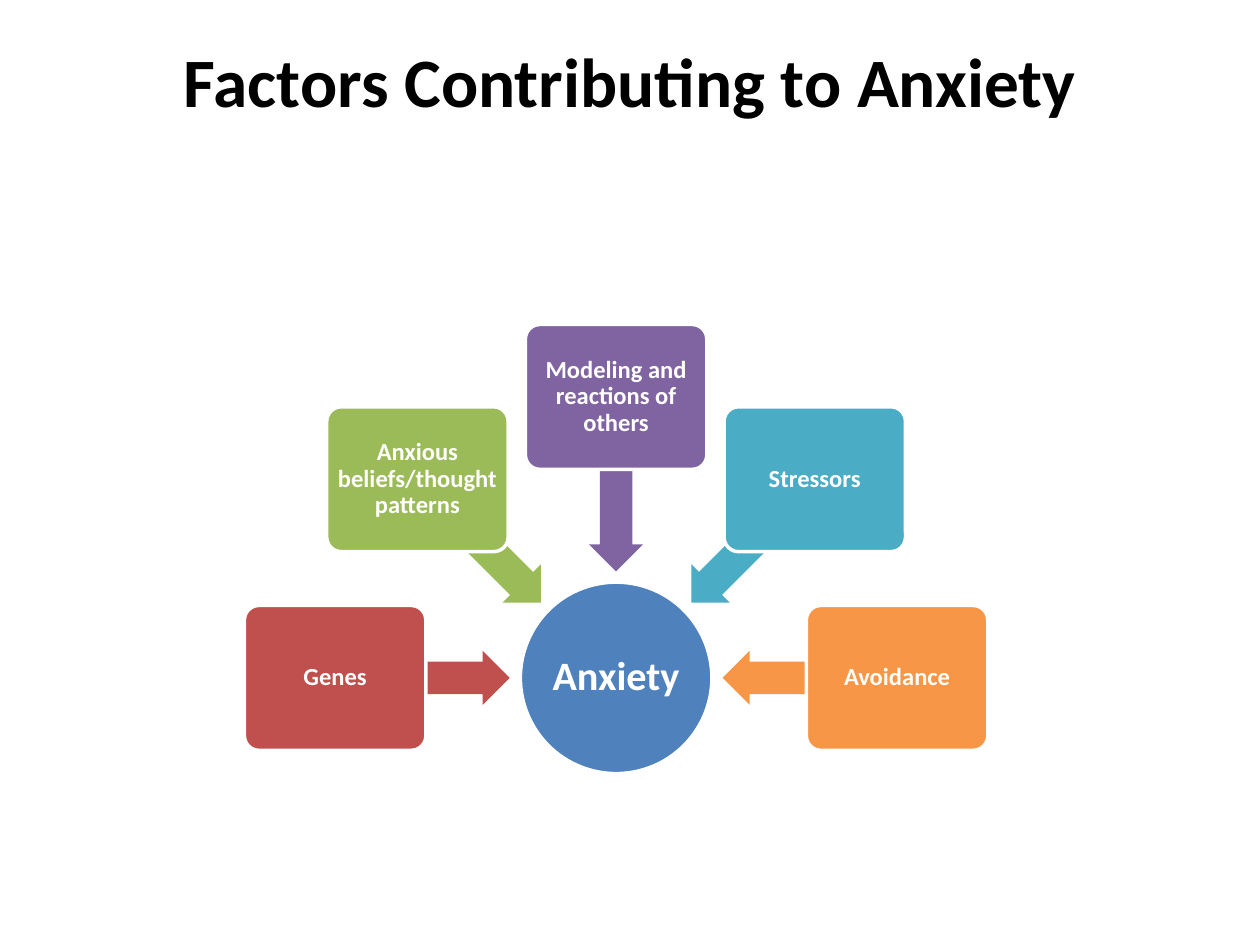
"""Build a slide showing the factors that feed anxiety around a central hub."""
import math
import pptx
import pptx.util
import pptx.dml.color
import pptx.enum.shapes
import pptx.enum.text

Inches, Pt = pptx.util.Inches, pptx.util.Pt
Kind = pptx.enum.shapes.MSO_SHAPE
Anchor = pptx.enum.text.MSO_ANCHOR
Align = pptx.enum.text.PP_ALIGN

TITLE = "Factors Contributing to Anxiety"
HUB = "Anxiety"
FACTORS = [
    ("Genes", "red"),
    ("Anxious beliefs/thought patterns", "green"),
    ("Modeling and reactions of others", "purple"),
    ("Stressors", "teal"),
    ("Avoidance", "orange"),
]
COLORS = {
    "black": "000000", "white": "FFFFFF", "blue": "4F81BD", "red": "C0504D",
    "green": "9BBB59", "purple": "8064A2", "teal": "4BACC6", "orange": "F79646",
}
FONT = "Calibri"
WIDE, HIGH = 10, 7.5
MID = (4.89, 5.38)
HUB_SIZE = (1.52, 1.52)
BOX_SIZE = (1.44, 1.15)
ARROW_SIZE = (1.39, 0.43)
BOX_REACH, ARROW_REACH = 2.23, 1.54
START, SWEEP = 180, 180


def color(name):
    return pptx.dml.color.RGBColor.from_string(COLORS[name])


def write(shape, text, size, ink, inset):
    frame = shape.text_frame
    frame.text = text
    frame.word_wrap = True
    frame.auto_size = pptx.enum.text.MSO_AUTO_SIZE.NONE
    frame.vertical_anchor = Anchor.MIDDLE
    frame.margin_left = frame.margin_right = Inches(inset)
    frame.margin_top = frame.margin_bottom = Inches(inset)
    para = frame.paragraphs[0]
    para.alignment = Align.CENTER
    font = para.runs[0].font
    font.name, font.size, font.bold = FONT, Pt(size), True
    font.color.rgb = color(ink)
    return frame


def place(slide, kind, size, fill, angle=0, reach=0):
    turn = math.radians(angle)
    left = MID[0] + reach * math.cos(turn) - size[0] / 2
    top = MID[1] + reach * math.sin(turn) - size[1] / 2
    shape = slide.shapes.add_shape(kind, *map(Inches, (left, top, *size)))
    shape.shadow.inherit = False
    shape.fill.solid()
    shape.fill.fore_color.rgb = color(fill)
    shape.line.fill.background()
    return shape


def label(shape, text, size, inset):
    shape.line.color.rgb = color("white")
    shape.line.width = Pt(2)
    frame = write(shape, text, size, "white", inset)
    frame.paragraphs[0].line_spacing = 0.9


def main():
    deck = pptx.Presentation()
    deck.slide_width, deck.slide_height = Inches(WIDE), Inches(HIGH)
    slide = deck.slides.add_slide(deck.slide_layouts[5])

    title = slide.shapes.title
    title.left, title.top = Inches(0.5), Inches(0.3)
    title.width, title.height = Inches(9), Inches(1.25)
    write(title, TITLE, 39.6, "black", 0).vertical_anchor = Anchor.TOP

    hub = place(slide, Kind.OVAL, HUB_SIZE, "blue")
    label(hub, HUB, 23, 0.02)

    step = SWEEP / (len(FACTORS) - 1)
    for i, (text, fill) in enumerate(FACTORS):
        angle = START + i * step
        arrow = place(slide, Kind.LEFT_ARROW, ARROW_SIZE, fill, angle, ARROW_REACH)
        arrow.rotation = angle % 360
        arrow.adjustments[0], arrow.adjustments[1] = 0.6, 0.5
        box = place(slide, Kind.ROUNDED_RECTANGLE, BOX_SIZE, fill, angle, BOX_REACH)
        box.adjustments[0] = 0.1
        label(box, text, 14, 0.03)

    deck.save("out.pptx")


if __name__ == "__main__":
    main()
